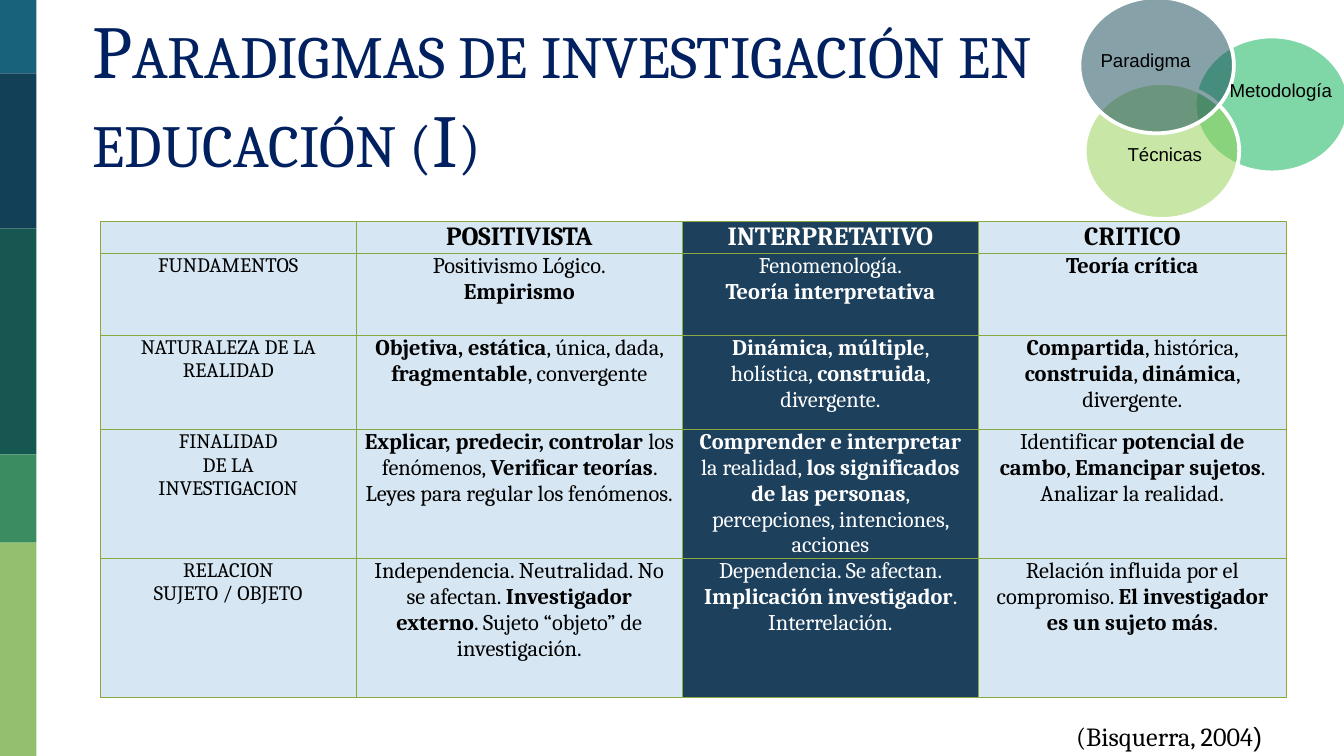
from dataclasses import dataclass
from itertools import accumulate

from lxml import etree
from pptx import Presentation
from pptx.dml.color import RGBColor
from pptx.enum import shapes, text
from pptx.oxml import ns
from pptx.util import Cm, Pt

COLORS = {
    "title": "002060", "black": "000000", "white": "FFFFFF",
    "cell": "D6E6F2", "highlight": "1D405D", "border": "89AA3E",
    "paradigm": "114454", "method": "00B050", "technique": "92D050",
}
SERIF, SANS = "Cambria", "Arial"
HIGHLIGHT_COLUMN = 2


@dataclass
class Strip:
    height: float
    color: str


@dataclass
class Circle:
    left: float
    top: float
    color: str


@dataclass
class Label:
    words: str
    left: float
    top: float
    width: float
    align: text.PP_ALIGN = text.PP_ALIGN.LEFT


STRIPS = [Strip(1.39, "18637B"), Strip(2.93, "124057"), Strip(4.27, "165751"),
          Strip(1.67, "3B8D61"), Strip(4.03, "94BF6E")]
CIRCLES = [Circle(22.58, 0.69, "method"), Circle(20.5, 1.57, "technique"),
           Circle(20.4, -0.05, "paradigm")]
LABELS = [Label("Paradigma", 20.55, 0.79, 2.67),
          Label("Metodología", 22.91, 1.37, 2.59, text.PP_ALIGN.CENTER),
          Label("Técnicas", 21.06, 2.57, 2.13)]

COLUMN_WIDTHS = [4.83, 6.17, 5.59, 5.82]
ROW_HEIGHTS = [0.56, 1.55, 1.78, 2.26, 2.62]
# Double asterisks enclose bold words
PARADIGMS = [
    ["", "**POSITIVISTA**", "**INTERPRETATIVO**", "**CRITICO**"],
    ["FUNDAMENTOS",
     "Positivismo Lógico.\n**Empirismo**",
     "Fenomenología.\n**Teoría interpretativa**",
     "**Teoría crítica**"],
    ["NATURALEZA DE LA\nREALIDAD",
     "**Objetiva, estática**, única, dada, **fragmentable**, convergente",
     "**Dinámica, múltiple**, holística, **construida**, divergente.",
     "**Compartida**, histórica, **construida**, **dinámica**, divergente."],
    ["FINALIDAD\nDE LA\nINVESTIGACION",
     "**Explicar, predecir, controlar **los fenómenos, **Verificar teorías**. "
     "Leyes para regular los fenómenos.",
     "**Comprender e interpretar **la realidad, **los significados de las personas**, "
     "percepciones, intenciones, acciones",
     "Identificar **potencial de cambo**, **Emancipar sujetos**. Analizar la realidad."],
    ["RELACION\nSUJETO / OBJETO",
     "Independencia. Neutralidad. No se afectan. **Investigador externo**. "
     "Sujeto “objeto” de investigación.",
     "Dependencia. Se afectan. **Implicación investigador**. Interrelación.",
     "Relación influida por el compromiso. **El investigador es un sujeto más**."],
]


def rgb(color: str) -> RGBColor:
    return RGBColor.from_string(COLORS.get(color, color))


def add_text(paragraph, words: str, *, size: float, font: str = SERIF, color: str = "black",
             align=text.PP_ALIGN.LEFT, small_caps: bool = False) -> None:
    """Append runs to a paragraph; words between ** are bold."""
    paragraph.alignment = align
    for i, part in enumerate(words.split("**")):
        if not part:
            continue
        run = paragraph.add_run()
        run.text = part
        run.font.size, run.font.name = Pt(size), font
        run.font.bold = i % 2 == 1
        run.font.color.rgb = rgb(color)
        if small_caps:
            run.font._element.set("cap", "small")


def add_box(slide, left: float, top: float, width: float, height: float):
    box = slide.shapes.add_textbox(Cm(left), Cm(top), Cm(width), Cm(height))
    box.text_frame.word_wrap = True
    return box.text_frame.paragraphs[0]


def add_plain_shape(slide, kind, left: float, top: float, width: float, height: float, color: str):
    shape = slide.shapes.add_shape(kind, Cm(left), Cm(top), Cm(width), Cm(height))
    shape.shadow.inherit = False
    shape.fill.solid()
    shape.fill.fore_color.rgb = rgb(color)
    shape.line.fill.background()
    return shape


def add_circle(slide, circle: Circle) -> None:
    oval = add_plain_shape(slide, shapes.MSO_SHAPE.OVAL, circle.left, circle.top,
                           2.92, 2.57, circle.color)
    oval.line.color.rgb = rgb("white")
    oval.line.width = Pt(2)
    fill_color = oval._element.spPr.find(ns.qn("a:solidFill"))[0]
    etree.SubElement(fill_color, ns.qn("a:alpha"), val="50000")


def set_borders(cell) -> None:
    properties = cell._tc.get_or_add_tcPr()
    for i, side in enumerate(("lnL", "lnR", "lnT", "lnB")):
        line = etree.Element(ns.qn(f"a:{side}"), w=str(Pt(0.75)))
        fill = etree.SubElement(line, ns.qn("a:solidFill"))
        etree.SubElement(fill, ns.qn("a:srgbClr"), val=COLORS["border"])
        properties.insert(i, line)


def fill_cell(cell, words: str, size: float, highlighted: bool) -> None:
    cell.margin_left = cell.margin_right = Cm(0.15)
    cell.margin_top = cell.margin_bottom = 0
    cell.fill.solid()
    cell.fill.fore_color.rgb = rgb("highlight" if highlighted else "cell")
    set_borders(cell)
    frame = cell.text_frame
    for i, line in enumerate(words.split("\n")):
        paragraph = frame.add_paragraph() if i else frame.paragraphs[0]
        add_text(paragraph, line, size=size, align=text.PP_ALIGN.CENTER,
                 color="white" if highlighted else "black")
    if not words:  # keeps the empty corner as low as its row
        etree.SubElement(frame.paragraphs[0]._p, ns.qn("a:endParaRPr"), sz=str(size * 100))


def add_paradigm_table(slide) -> None:
    table = slide.shapes.add_table(len(ROW_HEIGHTS), len(COLUMN_WIDTHS), Cm(1.9), Cm(4.19),
                                   Cm(sum(COLUMN_WIDTHS)), Cm(sum(ROW_HEIGHTS))).table
    table.first_row = table.horz_banding = False
    for column, width in zip(table.columns, COLUMN_WIDTHS):
        column.width = Cm(width)
    for r, (row, height) in enumerate(zip(table.rows, ROW_HEIGHTS)):
        row.height = Cm(height)
        for c, words in enumerate(PARADIGMS[r]):
            size = 14 if r == 0 else 11 if c == 0 else 12
            fill_cell(table.cell(r, c), words, size, c == HIGHLIGHT_COLUMN)


def main() -> None:
    deck = Presentation()
    deck.slide_width, deck.slide_height = Cm(25.4), Cm(14.29)
    slide = deck.slides.add_slide(deck.slide_layouts[5])

    # Side strips, stacked from the top
    tops = accumulate((strip.height for strip in STRIPS), initial=0)
    for strip, top in zip(STRIPS, tops):
        add_plain_shape(slide, shapes.MSO_SHAPE.RECTANGLE, 0, top, 0.69, strip.height, strip.color)

    # Title
    title = slide.shapes.title
    title.left, title.top, title.width, title.height = Cm(1.5), Cm(1.19), Cm(23.39), Cm(1.14)
    frame = title.text_frame
    frame.auto_size = text.MSO_AUTO_SIZE.NONE
    frame.vertical_anchor = text.MSO_ANCHOR.MIDDLE
    frame.margin_left = frame.margin_right = frame.margin_top = frame.margin_bottom = Cm(0.25)
    frame.paragraphs[0].space_before = Pt(6)
    add_text(frame.paragraphs[0], "Paradigmas de investigación en educación (I)",
             size=40, color="title", small_caps=True)

    # Comparison of paradigms
    add_paradigm_table(slide)

    # Citation
    citation = add_box(slide, 20.09, 13.49, 4.8, 0.86)
    add_text(citation, "(Bisquerra, 2004", size=14)
    add_text(citation, ")", size=14, font=SANS)

    # Overlapping circles and their labels
    for circle in CIRCLES:
        add_circle(slide, circle)
    for label in LABELS:
        paragraph = add_box(slide, label.left, label.top, label.width, 0.69)
        add_text(paragraph, label.words, size=10, font=SANS, align=label.align)

    deck.save("out.pptx")


if __name__ == "__main__":
    main()
